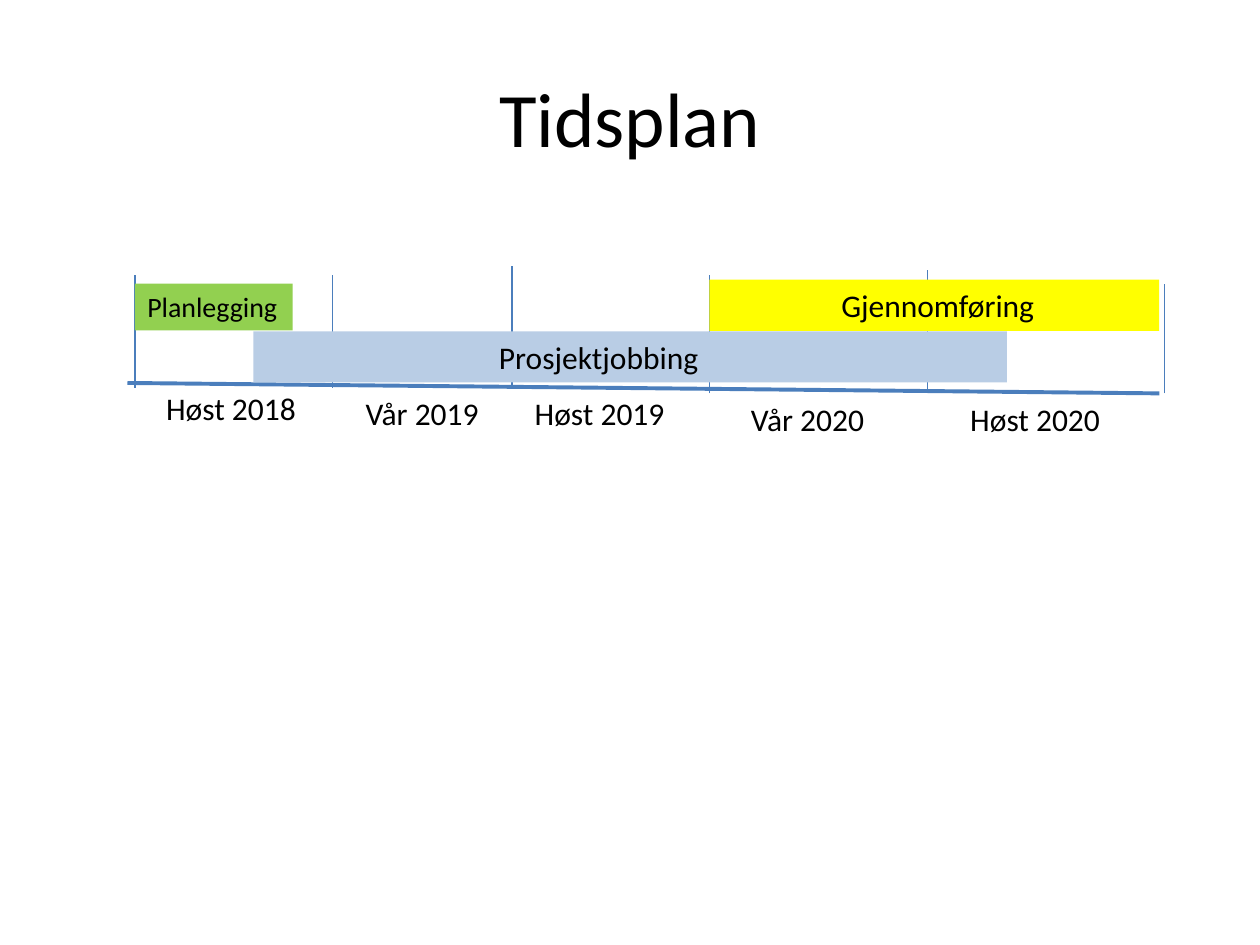
from pptx import Presentation
from pptx.dml.color import RGBColor
from pptx.enum.shapes import MSO_CONNECTOR, MSO_SHAPE
from pptx.enum.text import MSO_ANCHOR, PP_ALIGN
from pptx.oxml.ns import qn
from pptx.util import Cm, Pt
from lxml import etree

STRAIGHT = MSO_CONNECTOR.STRAIGHT
RECTANGLE = MSO_SHAPE.RECTANGLE
MIDDLE, TOP = MSO_ANCHOR.MIDDLE, MSO_ANCHOR.TOP
LEFT, CENTER = PP_ALIGN.LEFT, PP_ALIGN.CENTER

BLACK = RGBColor(0x00, 0x00, 0x00)
BLUE = RGBColor(0x4B, 0x7E, 0xBC)
YELLOW = RGBColor(0xFF, 0xFF, 0x00)
GREEN = RGBColor(0x92, 0xD0, 0x50)
LIGHT_BLUE = RGBColor(0xB9, 0xCD, 0xE5)

FONT = "Calibri"
INSET = 0.25

TICKS = [
    (0.15, 0.18, 2.46),
    (4.14, 0.18, 2.46),
    (7.75, 0, 2.46),
    (11.73, 0.18, 2.57),
    (16.13, 0.08, 2.57),
    (20.9, 0.36, 2.57),
]
PERIODS = [
    ("Høst 2018", 0.53, 2.36, 3.15, INSET),
    ("Vår 2019", 4.55, 2.46, 2.82, INSET),
    ("Høst 2019", 7.7, 2.46, 3.99, 0.51),
    ("Vår 2020", 12.32, 2.57, 2.82, INSET),
    ("Høst 2020", 16.74, 2.57, 3.15, INSET),
]
PHASES = [
    ("Gjennomføring", 11.73, 0.28, 9.07, 1.03, YELLOW, 18, 2.66),
    ("Planlegging", 0.15, 0.36, 3.18, 0.94, GREEN, 16, INSET),
    ("Prosjektjobbing", 2.54, 1.32, 15.19, 1.03, LIGHT_BLUE, 18, 4.95),
]


def set_text(sp, text, size, align=LEFT, anchor=TOP, inset=INSET, wrap=True):
    tf = sp.text_frame
    tf.text = text
    tf.word_wrap = wrap
    tf.vertical_anchor = anchor
    tf.margin_left = Cm(inset)
    p = tf.paragraphs[0]
    p.alignment = align
    r = p.runs[0]
    r.font.name = FONT
    r.font.size = Pt(size)
    r.font.color.rgb = BLACK


def add_line(s, x1, y1, x2, y2, width):
    line = s.shapes.add_connector(STRAIGHT, Cm(x1), Cm(y1), Cm(x2), Cm(y2))
    line.line.color.rgb = BLUE
    line.line.width = Pt(width)
    etree.SubElement(line._element.spPr, qn("a:effectLst"))


def add_title(s, left, top, width, height):
    sp = s.shapes.add_textbox(Cm(left), Cm(top), Cm(width), Cm(height))
    set_text(sp, "Tidsplan", 44, CENTER, MIDDLE)


def add_timeline(s, left, top, width):
    add_line(s, left, top + 2.36, left + width, top + 2.57, 2.25)
    for x, y1, y2 in TICKS:
        add_line(s, left + x, top + y2, left + x, top + y1, 0.75)
    for text, x, y, w, inset in PERIODS:
        sp = s.shapes.add_textbox(Cm(left + x), Cm(top + y), Cm(w), Cm(1.03))
        set_text(sp, text, 18, inset=inset, wrap=False)
    for text, x, y, w, h, color, size, inset in PHASES:
        sp = s.shapes.add_shape(RECTANGLE, Cm(left + x), Cm(top + y), Cm(w), Cm(h))
        sp.shadow.inherit = False
        sp.fill.solid()
        sp.fill.fore_color.rgb = color
        sp.line.fill.background()
        set_text(sp, text, size, inset=inset)


def main():
    prs = Presentation()
    prs.slide_width = Cm(25.4)
    prs.slide_height = Cm(19.05)
    s = prs.slides.add_slide(prs.slide_layouts[6])
    add_title(s, 1.27, 0.76, 22.86, 3.18)
    add_timeline(s, 2.57, 5.36, 20.8)
    prs.save("out.pptx")


if __name__ == "__main__":
    main()
